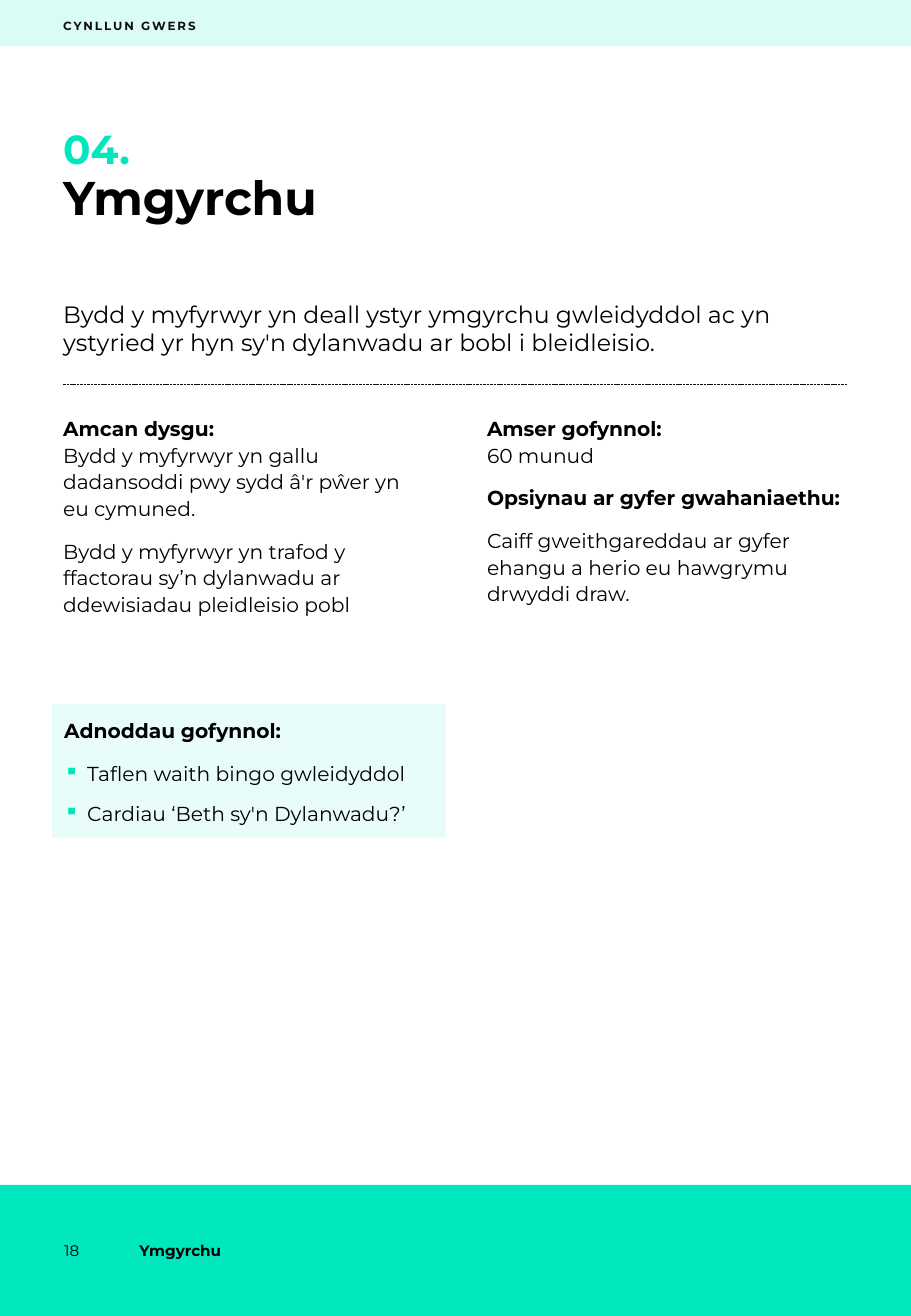
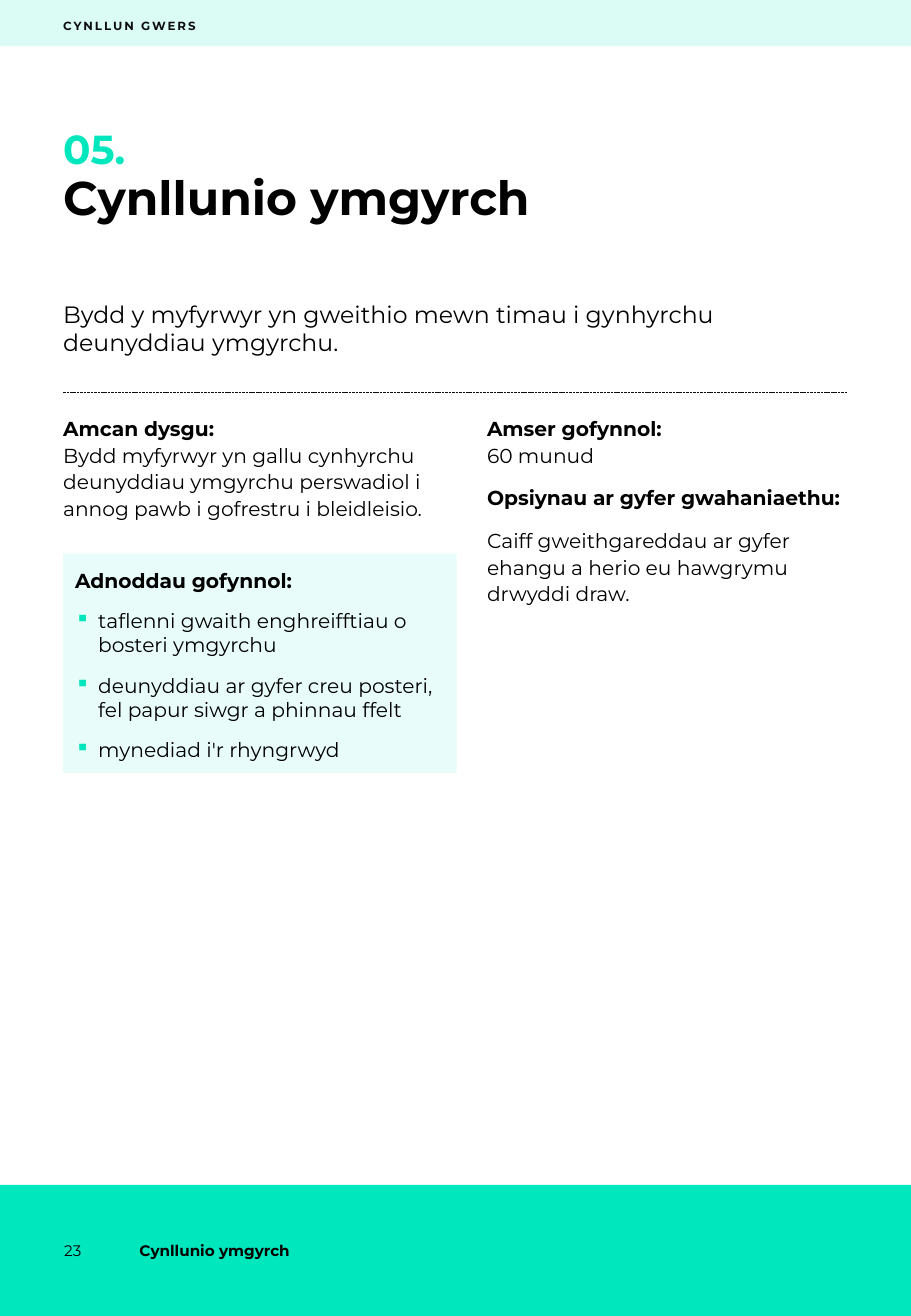
from copy import deepcopy

from lxml import etree
from pptx import Presentation
from pptx import util as u
from pptx.dml.color import RGBColor
from pptx.enum import dml, shapes, text
from pptx.oxml import ns

# Shared look
MINT = RGBColor(0x00, 0xE7, 0xBD)
BLACK = RGBColor(0, 0, 0)
INK = RGBColor(0x0D, 0x0D, 0x0D)
FONT = "Montserrat"
PAGE_WIDTH, PAGE_HEIGHT = 7.5, 10.84
MARGIN, TEXT_WIDTH = 0.52, 6.46
COLUMN_TOP, COLUMN_WIDTH, RIGHT_COLUMN = 3.41, 2.96, 4.01
FOOTER_TOP, FOOTER_HEIGHT = 9.76, 1.08
INDENT = 0.19
BODY = {"size": u.Pt(12)}
MIDDLE = text.MSO_ANCHOR.MIDDLE

# Content
LESSONS = [
    {
        "number": "04.", "title": "Ymgyrchu", "page": "18", "rule_top": 3.17,
        "summary": "Bydd y myfyrwyr yn deall ystyr ymgyrchu gwleidyddol ac yn "
                   "ystyried yr hyn sy'n dylanwadu ar bobl i bleidleisio.",
        "aims": ["Bydd y myfyrwyr yn gallu dadansoddi pwy sydd â'r pŵer yn eu cymuned.",
                 "Bydd y myfyrwyr yn trafod y ffactorau sy’n dylanwadu ar "
                 "ddewisiadau pleidleisio pobl"],
        "aims_height": 2.14,
        "panel": (0.43, 5.8, 3.24, 1.1),
        "resources": [("Taflen waith bingo gwleidyddol", 1.1),
                      ("Cardiau ‘Beth sy'n Dylanwadu?’", 1.0)],
    },
    {
        "number": "05.", "title": "Cynllunio ymgyrch", "page": "23", "rule_top": 3.23,
        "summary": "Bydd y myfyrwyr yn gweithio mewn timau i gynhyrchu "
                   "deunyddiau ymgyrchu.",
        "aims": ["Bydd myfyrwyr yn gallu cynhyrchu deunyddiau ymgyrchu perswadiol i "
                 "annog pawb i gofrestru i bleidleisio."],
        "aims_height": 1.2,
        "panel": (0.52, 4.56, 3.24, 1.81),
        "resources": [("taflenni gwaith enghreifftiau o bosteri ymgyrchu", 1.0),
                      ("deunyddiau ar gyfer creu posteri, fel papur siwgr a phinnau ffelt", 1.0),
                      ("mynediad i'r rhyngrwyd", 1.0)],
    },
]


def apply(target, values):
    for name, value in values.items():
        setattr(target, name, value)


def add_span(para, words, color=BLACK, **style):
    span = para.add_run()
    span.text = words
    apply(span.font, {"name": FONT, "bold": False, **style})
    span.font.color.rgb = color
    return span


def set_frame(shape, inset=0.0, anchor=text.MSO_ANCHOR.TOP):
    frame = shape.text_frame
    margins = {f"margin_{side}": u.Inches(inset) for side in ("left", "top", "right", "bottom")}
    apply(frame, {"word_wrap": True, "vertical_anchor": anchor, **margins})
    return frame


def add_box(page, left, top, width, height, **frame_style):
    box = page.shapes.add_textbox(*map(u.Inches, (left, top, width, height)))
    return set_frame(box, **frame_style)


def add_line_of_text(page, place, words, line_spacing=1.0, frame_style=None, **style):
    para = add_box(page, *place, **(frame_style or {})).paragraphs[0]
    para.line_spacing = line_spacing
    return add_span(para, words, **style)


def add_paragraph(frame, heading="", body="", line_spacing=1.1):
    """Add a bold heading, a plain body, or both with a line break between."""
    first = not frame.paragraphs[0].runs
    para = frame.paragraphs[0] if first else frame.add_paragraph()
    apply(para, {"line_spacing": line_spacing, "space_after": u.Pt(2),
                 "space_before": u.Pt(0 if first else 7.5)})
    if heading:
        span = add_span(para, heading, bold=True, **BODY)
        if body:
            para.add_line_break()
            para._p[-1].append(deepcopy(span._r.rPr))
    if body:
        add_span(para, body, **BODY)
    return para


def add_bullet(para):
    props = para._p.get_or_add_pPr()
    props.set("marL", str(u.Inches(INDENT)))
    props.set("indent", str(-u.Inches(INDENT)))
    color = etree.SubElement(props, ns.qn("a:buClr"))
    etree.SubElement(color, ns.qn("a:srgbClr"), val=str(MINT))
    etree.SubElement(props, ns.qn("a:buChar"), char="▪")


def add_band(page, left, top, width, height, opacity=100):
    band = page.shapes.add_shape(shapes.MSO_SHAPE.RECTANGLE,
                                 *map(u.Inches, (left, top, width, height)))
    band.shadow.inherit = False
    band.fill.solid()
    band.fill.fore_color.rgb = MINT
    band.line.fill.background()
    if opacity < 100:
        color = band.fill._xPr.find(".//" + ns.qn("a:srgbClr"))
        etree.SubElement(color, ns.qn("a:alpha"), val=str(opacity * 1000))
    return band


def add_rule(page, top):
    rule = page.shapes.add_connector(
        shapes.MSO_CONNECTOR.STRAIGHT,
        *map(u.Inches, (MARGIN, top, 6.97, top)))
    rule.line.color.rgb = INK
    apply(rule.line, {"width": u.Pt(0.5), "dash_style": dml.MSO_LINE.SQUARE_DOT})
    etree.SubElement(rule._element.spPr, ns.qn("a:effectLst"))


def add_page_frame(page, title, number):
    # Header band
    add_band(page, 0, 0, PAGE_WIDTH, 0.38, opacity=14)
    label = add_line_of_text(page, (MARGIN, 0.07, 2.7, 0.28), "CYNLLUN GWERS",
                             frame_style={"anchor": MIDDLE},
                             color=INK, size=u.Pt(7), bold=True)
    label._r.get_or_add_rPr().set("spc", "120")
    # Footer band
    add_band(page, 0, FOOTER_TOP, PAGE_WIDTH, FOOTER_HEIGHT)
    for left, width, words, bold in ((0.43, 0.62, number, False), (1.05, 2.77, title, True)):
        add_line_of_text(page, (left, FOOTER_TOP, width, FOOTER_HEIGHT), words,
                         frame_style={"inset": 0.1, "anchor": MIDDLE},
                         size=u.Pt(9), bold=bold)


def add_columns(page, aims, aims_height):
    left = add_box(page, MARGIN, COLUMN_TOP, COLUMN_WIDTH, aims_height)
    add_paragraph(left, "Amcan dysgu:", aims[0])
    for aim in aims[1:]:
        add_paragraph(left, body=aim)
    right = add_box(page, RIGHT_COLUMN, COLUMN_TOP, COLUMN_WIDTH, 6.14)
    add_paragraph(right, "Amser gofynnol:", "60 munud")
    add_paragraph(right, "Opsiynau ar gyfer gwahaniaethu:")
    add_paragraph(right, body="Caiff gweithgareddau ar gyfer ehangu a herio eu "
                              "hawgrymu drwyddi draw.")


def add_resources(page, place, resources):
    frame = set_frame(add_band(page, *place, opacity=9), inset=0.1)
    add_paragraph(frame, "Adnoddau gofynnol:")
    for words, line_spacing in resources:
        add_bullet(add_paragraph(frame, body=words, line_spacing=line_spacing))
    for para in frame.paragraphs:
        para.alignment = text.PP_ALIGN.LEFT


def add_lesson(deck, lesson):
    page = deck.slides.add_slide(deck.slide_layouts[6])
    add_page_frame(page, lesson["title"], lesson["page"])
    # Title and summary
    add_line_of_text(page, (MARGIN, 1.02, TEXT_WIDTH, 0.37), lesson["number"],
                     color=MINT, size=u.Pt(24), bold=True)
    add_line_of_text(page, (MARGIN, 1.44, TEXT_WIDTH, 0.88), lesson["title"],
                     line_spacing=0.9, size=u.Pt(28), bold=True)
    add_line_of_text(page, (MARGIN, 2.47, TEXT_WIDTH, 0.7), lesson["summary"], size=u.Pt(14))
    add_rule(page, lesson["rule_top"])
    # Lesson details
    add_columns(page, lesson["aims"], lesson["aims_height"])
    add_resources(page, lesson["panel"], lesson["resources"])


def main():
    deck = Presentation()
    deck.slide_width, deck.slide_height = u.Inches(PAGE_WIDTH), u.Inches(PAGE_HEIGHT)
    for lesson in LESSONS:
        add_lesson(deck, lesson)
    deck.save("out.pptx")


if __name__ == "__main__":
    main()
